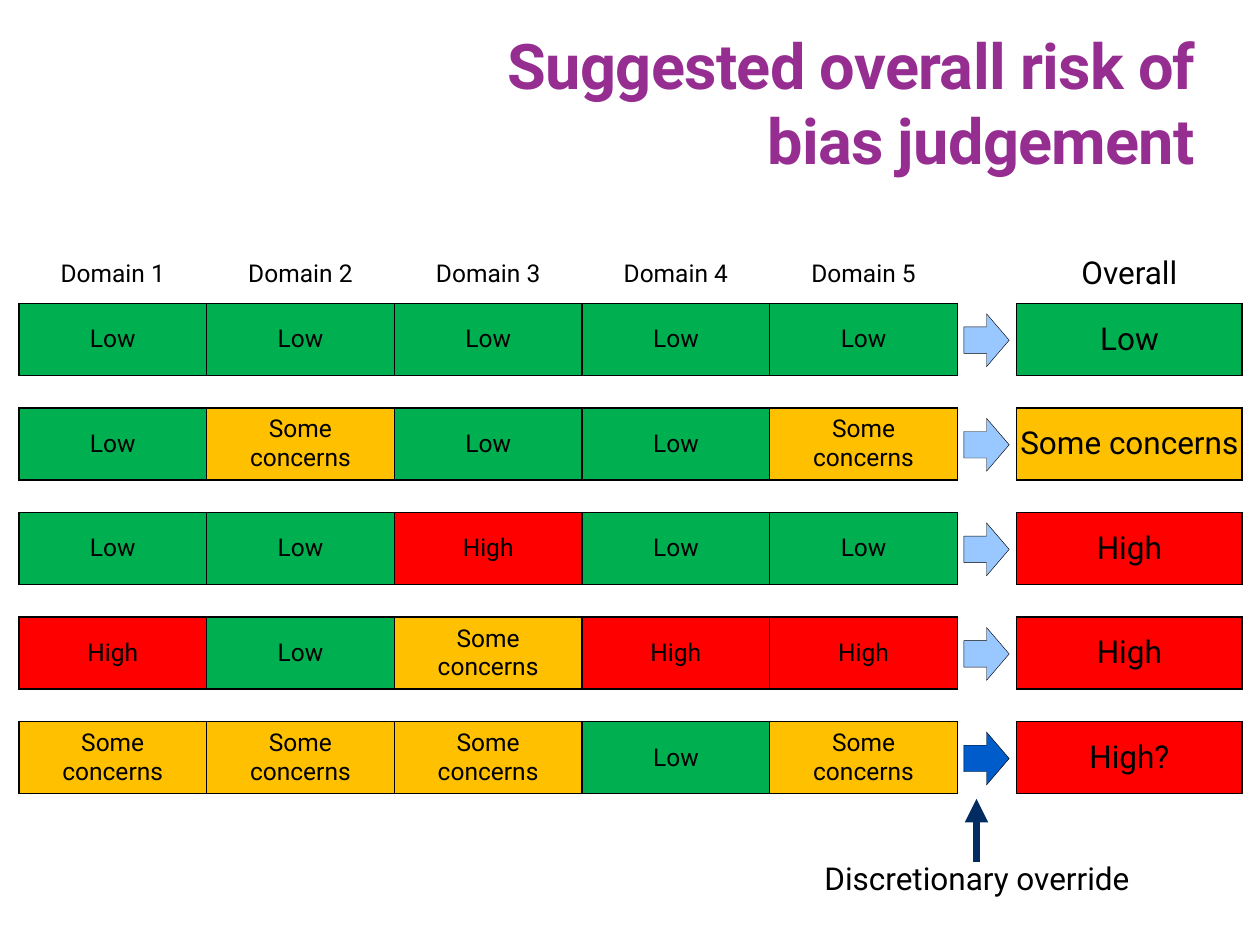
from lxml.etree import SubElement
from pptx import Presentation
from pptx.dml.color import RGBColor
from pptx.enum.shapes import MSO_CONNECTOR, MSO_SHAPE
from pptx.enum.text import MSO_ANCHOR, PP_ALIGN
from pptx.oxml.ns import qn
from pptx.util import Inches, Pt

FONT = "Roboto"
BLACK = "000000"
LOW, SOME, HIGH = "Low", "Some concerns", "High"
FILLS = {LOW: "00B050", SOME: "FFC000", HIGH: "FF0000", "High?": "FF0000"}
JUDGEMENTS = [
    ([LOW, LOW, LOW, LOW, LOW], LOW),
    ([LOW, SOME, LOW, LOW, SOME], SOME),
    ([LOW, LOW, HIGH, LOW, LOW], HIGH),
    ([HIGH, LOW, SOME, HIGH, HIGH], HIGH),
    ([SOME, SOME, SOME, LOW, SOME], "High?"),
]
COLUMN_WIDTHS = [1.49] * 5 + [0.47, 1.79]
OVERALL_COLUMN = len(COLUMN_WIDTHS) - 1
HEADER_HEIGHT, ROW_HEIGHT, GAP_HEIGHT = 0.47, 0.57, 0.26
NO_TABLE_STYLE = "{2D5ABB26-0587-4C30-8999-92F81FD0307C}"


def color(value):
    """Turn a hex string into a colour."""
    return RGBColor.from_string(value)


def style_paragraph(paragraph, size, value=BLACK, align=PP_ALIGN.CENTER, bold=False):
    """Set the alignment and font of a paragraph."""
    paragraph.alignment = align
    font = paragraph.font
    font.name, font.size, font.bold = FONT, Pt(size), bold
    font.color.rgb = color(value)


def add_text(slide, text, left, top, width, height, anchor=MSO_ANCHOR.TOP, **style):
    """Add a wrapped text box and return its paragraph."""
    box = slide.shapes.add_textbox(Inches(left), Inches(top), Inches(width), Inches(height))
    frame = box.text_frame
    frame.word_wrap = True
    frame.vertical_anchor = anchor
    paragraph = frame.paragraphs[0]
    paragraph.text = text
    style_paragraph(paragraph, **style)
    return paragraph


def add_borders(cell, sides):
    """Draw thin black borders on the given sides of a cell."""
    properties = cell._tc.get_or_add_tcPr()
    for side in sides:
        line = SubElement(properties, qn(f"a:ln{side}"), w=str(Pt(1)))
        SubElement(SubElement(line, qn("a:solidFill")), qn("a:srgbClr"), val=BLACK)


def fill_cell(cell, text, size, sides, fill=None):
    """Write a centred label in a bordered cell."""
    cell.text = text
    cell.vertical_anchor = MSO_ANCHOR.MIDDLE
    style_paragraph(cell.text_frame.paragraphs[0], size)
    add_borders(cell, sides)
    if fill:
        cell.fill.solid()
        cell.fill.fore_color.rgb = color(fill)


def clear_cell(cell):
    """Make an empty cell small and transparent so that its row can be low."""
    cell.margin_top = cell.margin_bottom = 0
    cell.fill.background()
    cell.text_frame.paragraphs[0]._p.get_or_add_endParaRPr().set("sz", "800")


def add_judgement_table(slide):
    """Add the table of domain judgements and overall results."""
    heights = [HEADER_HEIGHT] + ([ROW_HEIGHT, GAP_HEIGHT] * len(JUDGEMENTS))[:-1]
    frame = slide.shapes.add_table(
        len(heights), len(COLUMN_WIDTHS), Inches(0.15), Inches(1.94),
        Inches(sum(COLUMN_WIDTHS)), Inches(sum(heights)))
    table = frame.table
    table.first_row = table.horz_banding = False
    table._tbl.tblPr.find(qn("a:tableStyleId")).text = NO_TABLE_STYLE
    for column, width in zip(table.columns, COLUMN_WIDTHS):
        column.width = Inches(width)
    for row, height in zip(table.rows, heights):
        row.height = Inches(height)
    headers = [f"Domain {number}" for number in range(1, 6)] + ["", "Overall"]
    rows = {0: headers}
    for index, (domains, overall) in enumerate(JUDGEMENTS):
        rows[2 * index + 1] = domains + ["", overall]
    for row in range(len(heights)):
        labels = rows.get(row, [""] * len(COLUMN_WIDTHS))
        for column, label in enumerate(labels):
            cell = table.cell(row, column)
            if not label:
                clear_cell(cell)
                continue
            size = 18 if column == OVERALL_COLUMN else 14
            if column == OVERALL_COLUMN:
                cell.margin_left = cell.margin_right = 0
            fill_cell(cell, label, size, "LRTB" if row else "B", FILLS.get(label))


def add_block_arrow(slide, top, fill):
    """Add an arrow that leads from the domains to the overall result."""
    shape = slide.shapes.add_shape(
        MSO_SHAPE.RIGHT_ARROW, Inches(7.65), Inches(top), Inches(0.36), Inches(0.42))
    shape.shadow.inherit = False
    shape.fill.solid()
    shape.fill.fore_color.rgb = color(fill)
    shape.line.color.rgb = color(BLACK)
    shape.line.width = Pt(0.25)


def add_pointer(slide, x, start, end):
    """Add a thick vertical line with an arrowhead at its end."""
    connector = slide.shapes.add_connector(
        MSO_CONNECTOR.STRAIGHT, Inches(x), Inches(start), Inches(x), Inches(end))
    connector.line.color.rgb = color("002C62")
    connector.line.width = Pt(4.5)
    SubElement(connector.line._get_or_add_ln(), qn("a:tailEnd"), type="triangle")
    SubElement(connector._element.spPr, qn("a:effectLst"))


def main():
    """Build and save the slide."""
    presentation = Presentation()
    presentation.slide_width, presentation.slide_height = Inches(10), Inches(7.5)
    slide = presentation.slides.add_slide(presentation.slide_layouts[6])
    title = add_text(
        slide, "Suggested overall risk of bias judgement", 3.09, 0.21, 6.49, 1.2,
        anchor=MSO_ANCHOR.MIDDLE, size=36, value="962D91", align=PP_ALIGN.RIGHT, bold=True)
    title.runs[0]._r.get_or_add_rPr().set("spc", "-40")
    add_judgement_table(slide)
    last = len(JUDGEMENTS) - 1
    for index in range(len(JUDGEMENTS)):
        top = 2.49 + index * (ROW_HEIGHT + GAP_HEIGHT)
        add_block_arrow(slide, top, "005BCB" if index == last else "99C7FF")
    add_pointer(slide, 7.75, 6.84, 6.34)
    add_text(slide, "Discretionary override", 6.14, 6.77, 3.23, 0.44, size=18)
    presentation.save("out.pptx")


if __name__ == "__main__":
    main()
